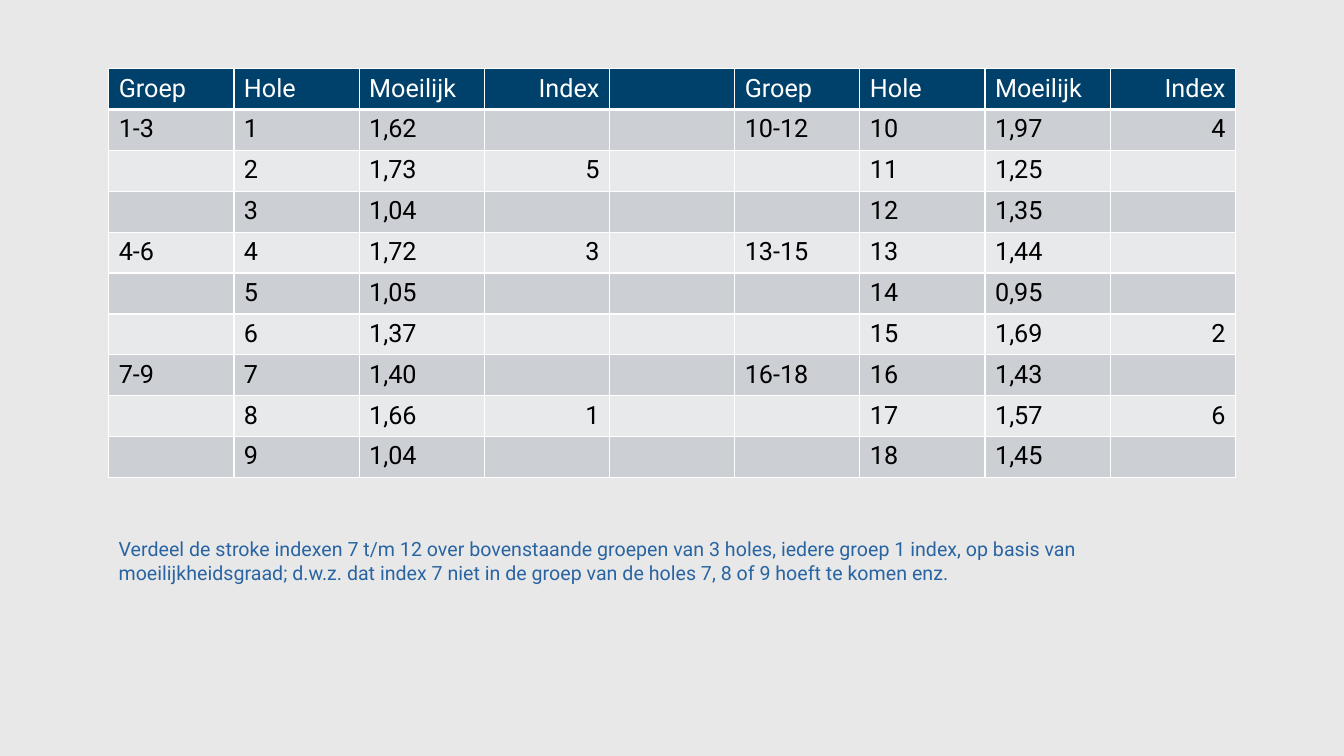
from lxml import etree
from pptx import Presentation
from pptx import util as u
from pptx.dml.color import RGBColor
from pptx.enum import text
from pptx.oxml.ns import qn

FONT = "Roboto"
BACKGROUND, WHITE, BLACK = "E8E8E8", "FFFFFF", "000000"
HEADER_FILL, BANDS, NOTE_COLOUR = "00416B", ("CCCFD4", "E7E9EB"), "2964A2"

HEADINGS = ["Groep", "Hole", "Moeilijk", "Index"]
DIFFICULTIES = ["1,62", "1,73", "1,04", "1,72", "1,05", "1,37", "1,40", "1,66", "1,04",
                "1,97", "1,25", "1,35", "1,44", "0,95", "1,69", "1,43", "1,57", "1,45"]
STROKE_INDEXES = {2: "5", 4: "3", 8: "1", 10: "4", 15: "2", 17: "6"}
HALF = 9
GROUP_SIZE = 3
NOTE = ("Verdeel de stroke indexen 7 t/m 12 over bovenstaande groepen van 3 holes, "
        "iedere groep 1 index, op basis van moeilijkheidsgraad; d.w.z. dat index 7 niet "
        "in de groep van de holes 7, 8 of 9 hoeft te komen enz.")


def colour(value):
    return RGBColor.from_string(value)


def add_run(paragraph, words, size, font_colour):
    run = paragraph.add_run()
    run.text = words
    run.font.name = FONT
    run.font.size = u.Pt(size)
    run.font.bold = False
    run.font.color.rgb = colour(font_colour)


def add_borders(cell, top, bottom):
    """Draw white borders; the top and bottom widths are in points."""
    properties = cell._tc.get_or_add_tcPr()
    for side, width in (("L", 1), ("R", 1), ("T", top), ("B", bottom)):
        line = etree.SubElement(properties, qn(f"a:ln{side}"), w=str(u.Pt(width)))
        fill = etree.SubElement(line, qn("a:solidFill"))
        etree.SubElement(fill, qn("a:srgbClr"), val=WHITE)


def hole_cells(hole):
    """Return the group, hole, difficulty and index shown for one hole."""
    starts_group = hole % GROUP_SIZE == 1
    group = f"{hole}-{hole + GROUP_SIZE - 1}" if starts_group else ""
    return [group, str(hole), DIFFICULTIES[hole - 1], STROKE_INDEXES.get(hole, "")]


def add_hole_table(slide, left, top, width, height):
    rows = [HEADINGS + [""] + HEADINGS]
    rows += [hole_cells(hole) + [""] + hole_cells(hole + HALF)
             for hole in range(1, HALF + 1)]
    table = slide.shapes.add_table(len(rows), len(rows[0]), left, top, width, height).table
    for row_number, row in enumerate(rows):
        is_header = row_number == 0
        for column_number, words in enumerate(row):
            cell = table.cell(row_number, column_number)
            add_borders(cell, 3 if row_number == 1 else 1, 3 if is_header else 1)
            cell.fill.solid()
            cell.fill.fore_color.rgb = colour(
                HEADER_FILL if is_header else BANDS[(row_number - 1) % 2])
            if words:
                paragraph = cell.text_frame.paragraphs[0]
                if rows[0][column_number] == "Index":
                    paragraph.alignment = text.PP_ALIGN.RIGHT
                add_run(paragraph, words, 18, WHITE if is_header else BLACK)


def add_note(slide, left, top, width, height):
    frame = slide.shapes.add_textbox(left, top, width, height).text_frame
    frame.word_wrap = True
    frame.auto_size = text.MSO_AUTO_SIZE.SHAPE_TO_FIT_TEXT
    add_run(frame.paragraphs[0], NOTE, 14, NOTE_COLOUR)


def main():
    presentation = Presentation()
    presentation.slide_width, presentation.slide_height = u.Cm(33.87), u.Cm(19.05)
    slide = presentation.slides.add_slide(presentation.slide_layouts.get_by_name("Blank"))
    slide.background.fill.solid()
    slide.background.fill.fore_color.rgb = colour(BACKGROUND)
    left, width = u.Cm(2.74), u.Cm(28.4)
    add_hole_table(slide, left, u.Cm(1.73), width, u.Cm(10.3))
    add_note(slide, left, u.Cm(13.41), width, u.Cm(1.45))
    presentation.save("out.pptx")


if __name__ == "__main__":
    main()
